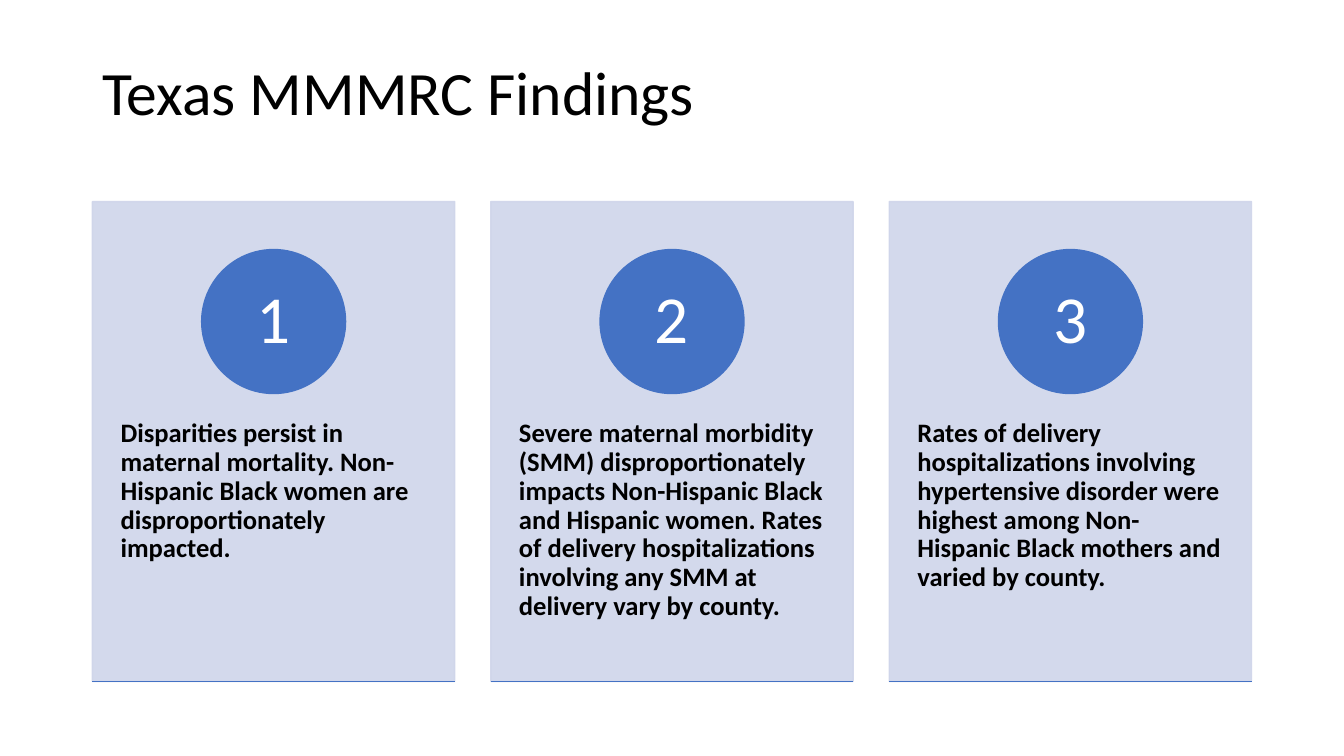
import pptx
import pptx.util
import pptx.dml.color
import pptx.enum.shapes
import pptx.enum.text
import pptx.oxml
import pptx.oxml.ns
from pptx.util import Cm

HUES = {"ink": "000000", "card": "CFD5EA", "blue": "4472C4", "white": "FFFFFF"}
TITLE = "Texas MMMRC Findings"
FACTS = [
    "Disparities persist in maternal mortality. Non-Hispanic Black women are "
    "disproportionately impacted.",
    "Severe maternal morbidity (SMM) disproportionately impacts Non-Hispanic Black "
    "and Hispanic women. Rates of delivery hospitalizations involving any SMM at "
    "delivery vary by county.",
    "Rates of delivery hospitalizations involving hypertensive disorder were highest "
    "among Non-Hispanic Black mothers and varied by county.",
]


def hue(name):
    """Return the named colour."""
    return pptx.dml.color.RGBColor.from_string(HUES[name])


def write(shape, text, size, color, align, anchor, pads=(0.25, 0.13), bold=False):
    """Fill a shape with one formatted paragraph."""
    frame = shape.text_frame
    frame.text = text
    frame.word_wrap = True
    frame.auto_size = pptx.enum.text.MSO_AUTO_SIZE.NONE
    frame.vertical_anchor = anchor
    frame.margin_left = frame.margin_right = Cm(pads[0])
    frame.margin_top = frame.margin_bottom = Cm(pads[1])
    para = frame.paragraphs[0]
    para.alignment = align
    para.line_spacing = 0.9
    para.font.name = "Calibri"
    para.font.size = pptx.util.Pt(size)
    para.font.bold = bold
    para.font.color.rgb = hue(color)


def add_form(slide, kind, box, color):
    """Add a plain shape with fill and line of one colour."""
    shape = slide.shapes.add_shape(kind, *map(Cm, box))
    shape.shadow.inherit = False
    shape.fill.solid()
    shape.fill.fore_color.rgb = hue(color)
    shape.line.color.rgb = hue(color)
    shape.line.width = pptx.util.Pt(1)
    return shape


def fade(shape, share):
    """Set the opacity of fill and line in percent."""
    for tone in shape.element.spPr.iter(pptx.oxml.ns.qn("a:srgbClr")):
        alpha = pptx.oxml.parse_xml(
            f'<a:alpha {pptx.oxml.ns.nsdecls("a")} val="{share * 1000}"/>')
        tone.append(alpha)


def add_rule(slide, left, top, width):
    """Draw a level blue line."""
    rule = slide.shapes.add_connector(
        pptx.enum.shapes.MSO_CONNECTOR.STRAIGHT,
        Cm(left), Cm(top), Cm(left + width), Cm(top))
    rule.line.color.rgb = hue("blue")
    rule.line.width = pptx.util.Pt(1)
    rule.element.spPr.append(
        pptx.oxml.parse_xml(f'<a:effectLst {pptx.oxml.ns.nsdecls("a")}/>'))


def add_title(slide, box):
    """Place and format the title."""
    title = slide.shapes.title
    title.left, title.top, title.width, title.height = map(Cm, box)
    write(title, TITLE, 44, "ink", pptx.enum.text.PP_ALIGN.LEFT,
          pptx.enum.text.MSO_ANCHOR.MIDDLE)


def add_card(slide, box, label, fact):
    """Build one numbered card inside the box."""
    left, top, width, height = box
    forms = pptx.enum.shapes.MSO_SHAPE
    aligns = pptx.enum.text.PP_ALIGN
    anchors = pptx.enum.text.MSO_ANCHOR
    fade(add_form(slide, forms.RECTANGLE, box, "card"), 90)

    drop = 0.38 * height
    body = slide.shapes.add_textbox(
        *map(Cm, (left, top + drop, width, 0.6 * height)))
    write(body, fact, 19, "ink", aligns.LEFT, anchors.TOP, (0.71, 0.91), True)

    disc = 0.3 * height
    spot = (left + (width - disc) / 2, top + 0.1 * height, disc, disc)
    badge = add_form(slide, forms.OVAL, spot, "blue")
    write(badge, label, 48, "white", aligns.CENTER, anchors.MIDDLE, (0, 0))
    add_rule(slide, left, top + height, width)


def add_cards(slide, box, gap):
    """Share the box among equal cards."""
    left, top, width, height = box
    count = len(FACTS)
    span = (width - gap * (count - 1)) / count
    for i, fact in enumerate(FACTS):
        add_card(slide, (left + i * (span + gap), top, span, height), str(i + 1), fact)


def main():
    """Build and save the slide."""
    deck = pptx.Presentation()
    deck.slide_width, deck.slide_height = Cm(33.87), Cm(19.05)
    slide = deck.slides.add_slide(deck.slide_layouts[5])
    add_title(slide, (2.33, 0.58, 29.21, 3.68))
    add_cards(slide, (2.33, 5.08, 29.21, 12.09), 0.91)
    deck.save("out.pptx")


if __name__ == "__main__":
    main()
